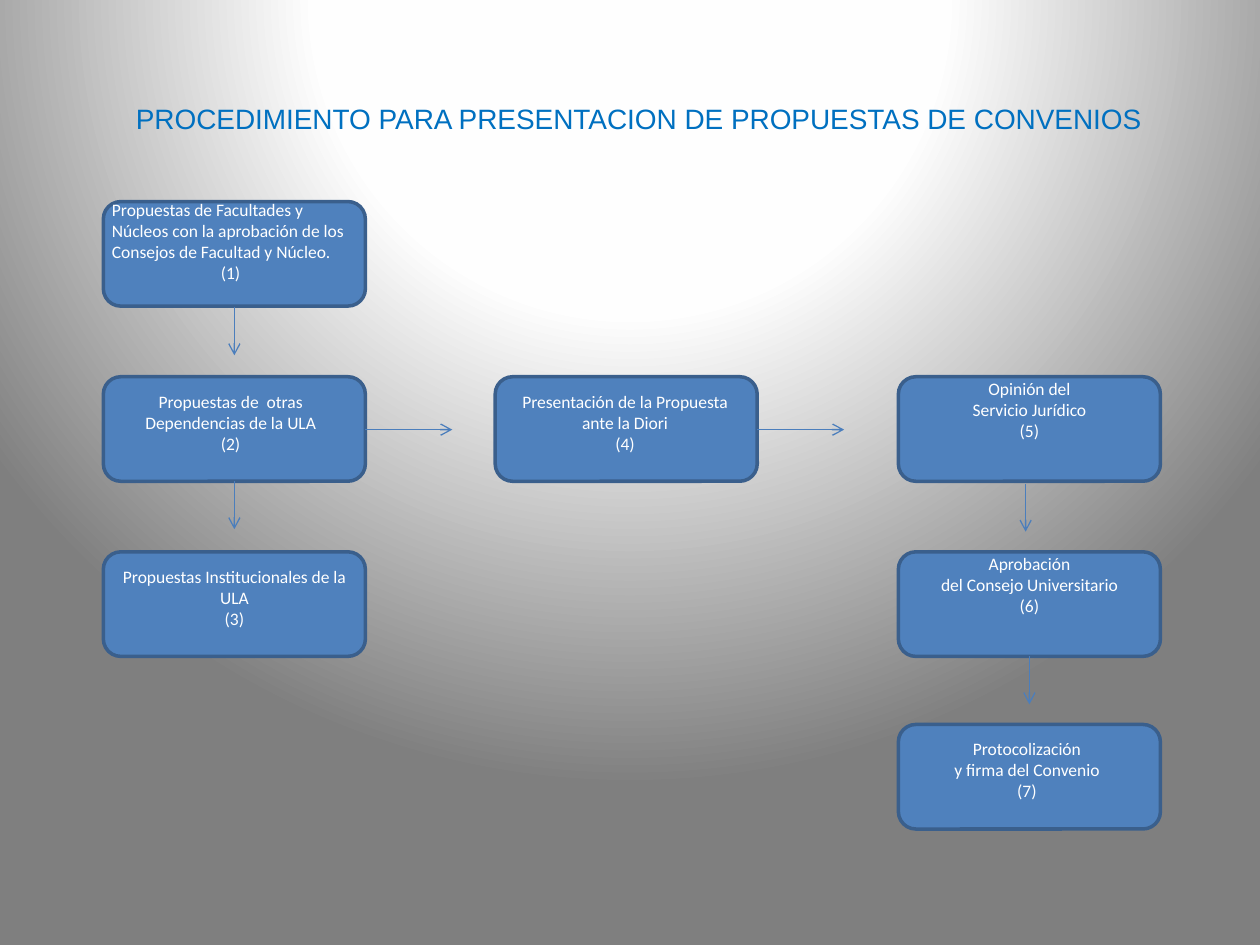
from pptx import Presentation
from pptx.dml.color import RGBColor
from pptx.enum.shapes import MSO_CONNECTOR, MSO_SHAPE
from pptx.enum.text import PP_ALIGN
from pptx.oxml import parse_xml
from pptx.oxml.ns import nsdecls, qn
from pptx.util import Inches, Pt
from lxml import etree

BLUE = RGBColor(0x4F, 0x81, 0xBD)
EDGE = RGBColor(0x3A, 0x5F, 0x8C)
ARROW = RGBColor(0x4B, 0x7E, 0xBC)
WHITE = RGBColor(0xFF, 0xFF, 0xFF)
TITLE = RGBColor(0x00, 0x70, 0xC0)
LEFT, CENTER = PP_ALIGN.LEFT, PP_ALIGN.CENTER
ROUND = MSO_SHAPE.ROUNDED_RECTANGLE
STRAIGHT = MSO_CONNECTOR.STRAIGHT

COLS = [0.82, 3.93, 7.13]
ROWS = [1.6, 2.99, 4.38, 5.75]
WIDTH, HEIGHT = 2.08, 0.83

prs = Presentation()
prs.slide_width, prs.slide_height = Inches(10), Inches(7.5)
slide = prs.slides.add_slide(prs.slide_layouts[6])
shapes = slide.shapes

# Radial background, lit from above the slide
slide.background.fill.gradient()
grad = slide.element.find(".//" + qn("a:gradFill"))
stops = "".join(
    f'<a:gs pos="{pos}"><a:srgbClr val="{color}"/></a:gs>'
    for pos, color in [(0, "FFFFFF"), (40000, "FEFEFE"), (100000, "7F7F7F")]
)
grad.getparent().replace(grad, parse_xml(
    f'<a:gradFill {nsdecls("a")} rotWithShape="1"><a:gsLst>{stops}</a:gsLst>'
    '<a:path path="circle">'
    '<a:fillToRect l="50000" t="-80000" r="50000" b="180000"/>'
    '</a:path></a:gradFill>'
))


def add_text(left, top, width, height, lines, font, size, color, aligns):
    box = shapes.add_textbox(
        Inches(left), Inches(top), Inches(width), Inches(height))
    frame = box.text_frame
    frame.word_wrap = True
    frame.text = "\n".join(lines)
    for para, align in zip(frame.paragraphs, aligns):
        para.alignment = align
        para.font.name = font
        para.font.size = Pt(size)
        para.font.color.rgb = color


# Steps: column, row, text left, text top, lines
steps = [
    (0, 0, 0.79, 1.53, ["Propuestas de Facultades y Núcleos con la aprobación "
                        "de los Consejos de Facultad y Núcleo.", "(1)"]),
    (0, 1, 0.79, 3.05, ["Propuestas de  otras Dependencias de la ULA", "(2)"]),
    (0, 2, 0.82, 4.44, ["Propuestas Institucionales de la ULA", "(3)"]),
    (1, 1, 3.92, 3.05, ["Presentación de la Propuesta ante la Diori", "(4)"]),
    (2, 1, 7.13, 2.95, ["Opinión del", "Servicio Jurídico", "(5)"]),
    (2, 2, 7.13, 4.34, ["Aprobación", "del Consejo Universitario", "(6)"]),
    (2, 3, 7.11, 5.81, ["Protocolización", "y firma del Convenio", "(7)"]),
]
for col, row, *_ in steps:
    step = shapes.add_shape(ROUND, Inches(COLS[col]), Inches(ROWS[row]),
                            Inches(WIDTH), Inches(HEIGHT))
    step.shadow.inherit = False
    step.fill.solid()
    step.fill.fore_color.rgb = BLUE
    step.line.color.rgb = EDGE
    step.line.width = Pt(2)

# Arrows: start x, start y, run across, run down
arrows = [
    (1.86, 2.44, 0, 0.38),
    (1.86, 3.82, 0, 0.38),
    (2.9, 3.41, 0.69, 0),
    (6.01, 3.41, 0.69, 0),
    (8.14, 3.84, 0, 0.38),
    (8.17, 5.21, 0, 0.38),
]
for x, y, across, down in arrows:
    arrow = shapes.add_connector(STRAIGHT, Inches(x), Inches(y),
                                 Inches(x + across), Inches(y + down))
    arrow.line.color.rgb = ARROW
    arrow.line.width = Pt(0.75)
    etree.SubElement(arrow.line._get_or_add_ln(), qn("a:tailEnd"), type="arrow")
    etree.SubElement(arrow._element.spPr, qn("a:effectLst"))

for col, row, left, top, lines in steps:
    first = LEFT if row == 0 else CENTER
    add_text(left, top, WIDTH, 0.71, lines, "Calibri", 10, WHITE,
             [first, CENTER, CENTER])

add_text(0.98, 0.76, 8.2, 0.37,
         ["PROCEDIMIENTO PARA PRESENTACION DE PROPUESTAS DE CONVENIOS"],
         "Arial", 16, TITLE, [LEFT])

prs.save("out.pptx")
